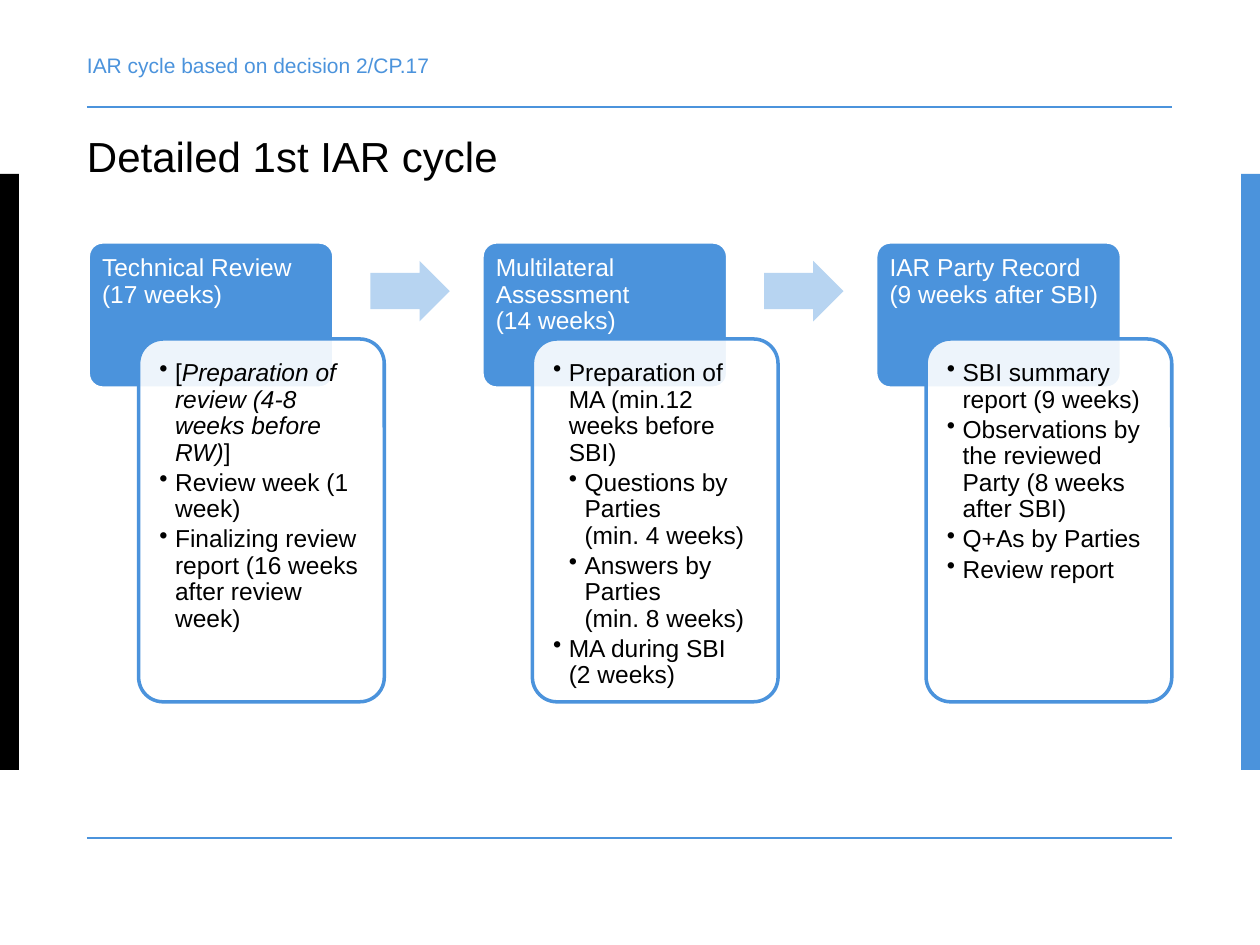
from dataclasses import dataclass

from lxml.etree import SubElement
from pptx import Presentation
from pptx.dml.color import RGBColor
from pptx.enum.shapes import MSO_CONNECTOR, MSO_SHAPE
from pptx.enum.text import MSO_ANCHOR
from pptx.oxml.ns import qn
from pptx.util import Inches, Pt

WIDE, HIGH = Inches(10), Inches(7.5)
HEX = {"blue": "4B93DC", "pale": "B7D4F1", "white": "FFFFFF", "black": "000000"}
LEFT, STEP, COL = 7, 31.25, 19.5  # column grid, in percent of the slide width
EDGE, SPAN = 6.9, 86.1
INDENT = 0.125


@dataclass(frozen=True)
class Box:
    """An area in percent of the slide's width and height."""
    x: float
    y: float
    w: float
    h: float

    def emu(self) -> tuple[int, ...]:
        sides = (WIDE, HIGH, WIDE, HIGH)
        return tuple(round(side * share / 100)
                     for side, share in zip(sides, (self.x, self.y, self.w, self.h)))


@dataclass(frozen=True)
class Item:
    """One paragraph; every second one of its texts is italic."""
    texts: tuple[str, ...]
    level: int = 0


@dataclass(frozen=True)
class Stage:
    head: str
    items: tuple[Item, ...]


@dataclass(frozen=True)
class Style:
    size: float
    color: str
    space: float | Pt
    after: float = 0
    inset: tuple[float, ...] = (0, 0, 0, 0)
    anchor: MSO_ANCHOR = MSO_ANCHOR.TOP


TOPIC = Style(12, "blue", Pt(15), anchor=MSO_ANCHOR.MIDDLE)
TITLE = Style(24, "black", Pt(32))
HEAD = Style(14, "white", 0.9, 4.9, (0.11, 0.11, 0.11, 0.06))
BODY = Style(14, "black", 0.9, 2.1, (0.11, 0.11, 0.11, 0.11))

STAGES = (
    Stage("Technical Review (17 weeks)", (
        Item(("[", "Preparation of review (4-8 weeks before RW)", "]")),
        Item(("Review week (1 week)",)),
        Item(("Finalizing review report (16 weeks after review week)",)))),
    Stage("Multilateral Assessment \n(14 weeks)", (
        Item(("Preparation of MA (min.12 weeks before SBI)",)),
        Item(("Questions by Parties \n(min. 4 weeks)",), 1),
        Item(("Answers by Parties \n(min. 8 weeks)",), 1),
        Item(("MA during SBI \n(2 weeks)",)))),
    Stage("IAR Party Record (9 weeks after SBI)", (
        Item(("SBI summary report (9 weeks)",)),
        Item(("Observations by the reviewed Party (8 weeks after SBI)",)),
        Item(("Q+As by Parties",)),
        Item(("Review report",)))),
)


def rgb(name: str) -> RGBColor:
    return RGBColor.from_string(HEX[name])


def draw(slide, kind: MSO_SHAPE, box: Box, fill: str, line: str = "",
         adjust: tuple[float, ...] = (), alpha: int = 100) -> None:
    shape = slide.shapes.add_shape(kind, *box.emu())
    shape.shadow.inherit = False
    shape.fill.solid()
    shape.fill.fore_color.rgb = rgb(fill)
    for pos, value in enumerate(adjust):
        shape.adjustments[pos] = value
    if alpha < 100:
        color = shape._element.spPr.find(qn("a:solidFill"))[0]
        SubElement(color, qn("a:alpha"), val=str(alpha * 1000))
    if line:
        shape.line.color.rgb = rgb(line)
        shape.line.width = Pt(2)
    else:
        shape.line.fill.background()


def rule(slide, y: float) -> None:
    """Draw a thin line across the content width."""
    x, top, width, _ = Box(EDGE, y, SPAN, 0).emu()
    line = slide.shapes.add_connector(MSO_CONNECTOR.STRAIGHT, x, top, x + width, top)
    line.line.color.rgb = rgb("blue")
    line.line.width = Pt(1)
    SubElement(line._element.spPr, qn("a:effectLst"))


def bullet(para, level: int) -> None:
    para.level = level
    props = para._p.get_or_add_pPr()
    props.set("marL", str(Inches(INDENT * (level + 1))))
    props.set("indent", str(-Inches(INDENT)))
    SubElement(props, qn("a:buChar"), char="•")


def write(slide, box: Box, items: tuple[Item, ...], style: Style,
          dots: bool = False) -> None:
    frame = slide.shapes.add_textbox(*box.emu()).text_frame
    frame.word_wrap = True
    frame.vertical_anchor = style.anchor
    for side, gap in zip(("left", "top", "right", "bottom"), style.inset):
        setattr(frame, f"margin_{side}", Inches(gap))
    for row, item in enumerate(items):
        para = frame.add_paragraph() if row else frame.paragraphs[0]
        if dots:
            bullet(para, item.level)
        para.line_spacing = style.space
        para.space_after = Pt(style.after)
        for pos, text in enumerate(item.texts):
            form = {"name": "Arial", "size": Pt(style.size), "italic": pos % 2 == 1}
            for turn, line in enumerate(text.split("\n")):
                if turn:
                    para.add_line_break()
                run = para.add_run()
                run.text = line
                run.font.color.rgb = rgb(style.color)
                for key, value in form.items():
                    setattr(run.font, key, value)


def column(slide, stage: Stage, x: float, last: bool) -> None:
    card = MSO_SHAPE.ROUNDED_RECTANGLE
    draw(slide, card, Box(x, 25.6, COL, 15.47), "blue", "white", (0.1,))
    write(slide, Box(x, 25.6, COL, 10.27), (Item((stage.head,)),), HEAD)
    draw(slide, card, Box(x + 4, 35.87, COL, 38.4), "white", "blue", (0.1,), 90)
    write(slide, Box(x + 4.55, 36.67, 18.3, 36.93), stage.items, BODY, True)
    if not last:
        draw(slide, MSO_SHAPE.RIGHT_ARROW, Box(x + 22.4, 27.6, 6.3, 6.4),
             "pale", adjust=(0.6, 0.5))


def main() -> None:
    deck = Presentation()
    deck.slide_width, deck.slide_height = WIDE, HIGH
    slide = deck.slides.add_slide(deck.slide_layouts[6])
    for x, color in ((0, "black"), (98.5, "blue")):
        draw(slide, MSO_SHAPE.RECTANGLE, Box(x, 18.4, 1.5, 63.07), color)
    for y in (11.33, 88.67):
        rule(slide, y)
    for pos, stage in enumerate(STAGES):
        column(slide, stage, LEFT + pos * STEP, pos == len(STAGES) - 1)
    write(slide, Box(EDGE, 4.53, SPAN, 4.53),
          (Item(("IAR cycle based on decision 2/CP.17",)),), TOPIC)
    write(slide, Box(EDGE, 13.2, SPAN, 8.4),
          (Item(("Detailed 1st IAR cycle",)),), TITLE)
    deck.save("out.pptx")


if __name__ == "__main__":
    main()
